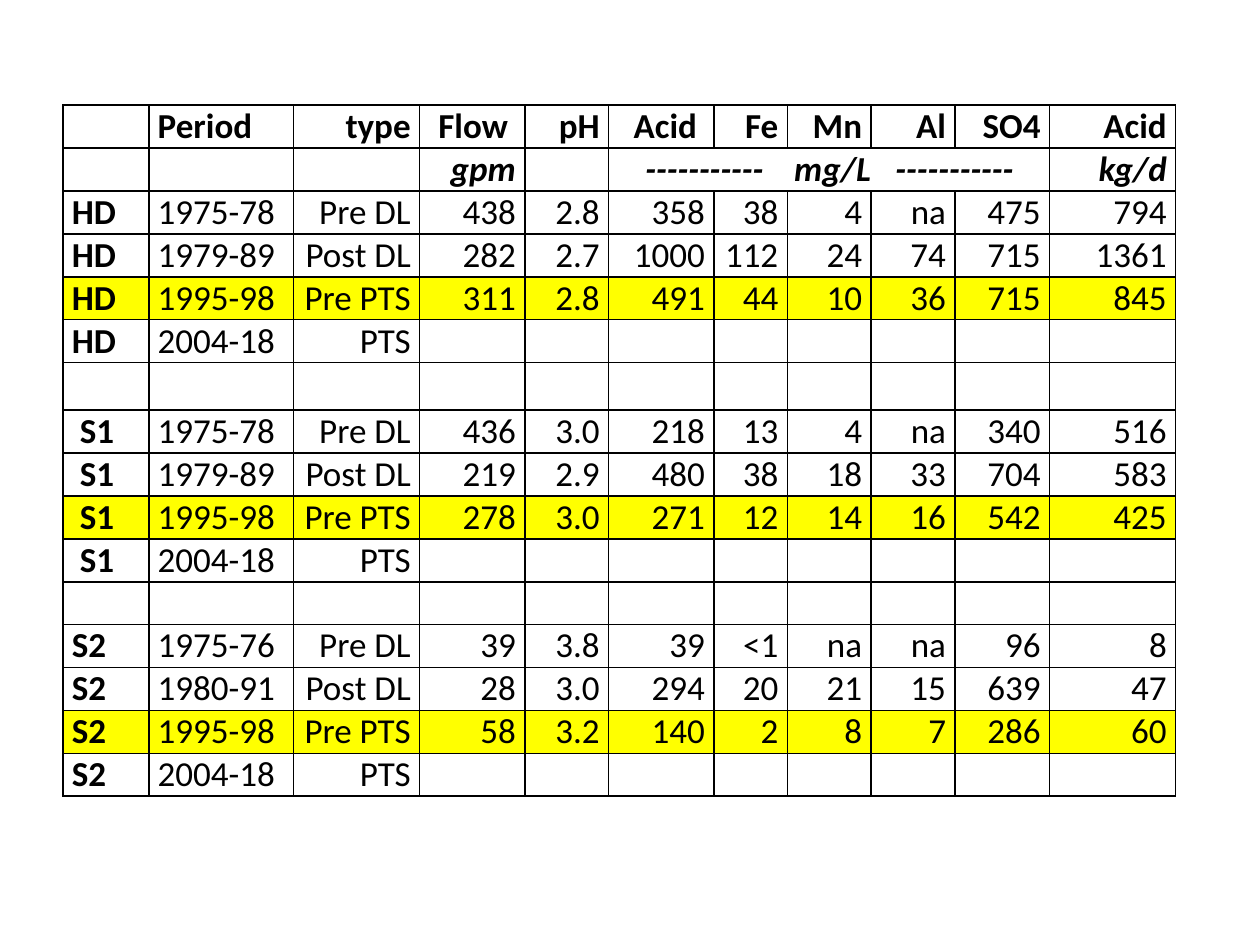
from dataclasses import dataclass

from lxml.etree import SubElement
from pptx import Presentation
from pptx.dml.color import RGBColor
from pptx.enum.text import PP_ALIGN as Align
from pptx.oxml.ns import qn
from pptx.table import Table, _Cell as Cell
from pptx.util import Cm, Pt

COLORS = {"ink": "000000", "highlight": "FFFF00"}
FONT_NAME = "Calibri"
COLUMN_WIDTHS = (1.73, 2.92, 2.54, 2.12, 1.69, 2.12, 1.48, 1.69, 1.69, 1.91, 2.54)
ROW_HEIGHT = 0.86
SIDE_MARGIN = 0.18
LEFT_ALIGNED_COLUMNS = 2
UNIT_ROW, UNIT_FIRST, UNIT_LAST = 1, 5, 9
UNIT_MARGIN = 0.74
UNIT_TABS = (3.0, 5.04)


@dataclass(frozen=True)
class Row:
    values: tuple[str, ...] = ()
    bold: bool = False
    italic: bool = False
    highlighted: bool = False
    height: float = ROW_HEIGHT


@dataclass(frozen=True)
class Site:
    """Measurements at one site, one line of text per period."""
    name: str
    periods: tuple[str, ...]


HEADER = Row(("", "Period", "type", "Flow ", "pH", "Acid ", "Fe", "Mn", "Al", "SO4", "Acid"),
             bold=True)
UNITS = Row(("", "", "", "gpm", "", "-----------\tmg/L\t-----------", "", "", "", "", "kg/d"),
            bold=True, italic=True)
SITES = (
    Site("HD", (
        "1975-78|Pre DL|438|2.8|358|38|4|na|475|794",
        "1979-89|Post DL|282|2.7|1000|112|24|74|715|1361",
        "1995-98|Pre PTS|311|2.8|491|44|10|36|715|845",
        "2004-18|PTS",
    )),
    Site(" S1", (
        "1975-78|Pre DL|436|3.0|218|13|4|na|340|516",
        "1979-89|Post DL|219|2.9|480|38|18|33|704|583",
        "1995-98|Pre PTS|278|3.0|271|12|14|16|542|425",
        "2004-18|PTS",
    )),
    Site("S2", (
        "1975-76|Pre DL|39|3.8|39|<1|na|na|96|8",
        "1980-91|Post DL|28|3.0|294|20|21|15|639|47",
        "1995-98|Pre PTS|58|3.2|140|2|8|7|286|60",
        "2004-18|PTS",
    )),
)
SPACERS = (Row(height=0.96), Row())


def table_rows() -> list[Row]:
    rows = [HEADER, UNITS]
    for index, site in enumerate(SITES):
        if index:
            rows.append(SPACERS[index - 1])
        for period in site.periods:
            values = (site.name, *period.split("|"))
            rows.append(Row(values, highlighted="Pre PTS" in values))
    return rows


def add_borders(cell: Cell) -> None:
    properties = cell._tc.get_or_add_tcPr()
    for side in ("lnL", "lnR", "lnT", "lnB"):
        line = SubElement(properties, qn(f"a:{side}"), w=str(Pt(1)))
        fill = SubElement(line, qn("a:solidFill"))
        SubElement(fill, qn("a:srgbClr"), val=COLORS["ink"])


def style_cell(cell: Cell, highlighted: bool) -> None:
    cell.margin_left = cell.margin_right = Cm(SIDE_MARGIN)
    cell.margin_top = cell.margin_bottom = 0
    add_borders(cell)
    if highlighted:
        cell.fill.solid()
        cell.fill.fore_color.rgb = RGBColor.from_string(COLORS["highlight"])
    else:
        cell.fill.background()


def write_cell(cell: Cell, text: str, align: Align, bold: bool, italic: bool) -> None:
    para = cell.text_frame.paragraphs[0]
    para.alignment = align
    span = para.add_run()
    span.text = text
    span.font.name = FONT_NAME
    span.font.size = Pt(20)
    span.font.bold = bold
    span.font.italic = italic
    span.font.color.rgb = RGBColor.from_string(COLORS["ink"])


def merge_concentration_units(table: Table) -> None:
    """Span the shared unit over its columns and set tab stops for its dashes."""
    cell = table.cell(UNIT_ROW, UNIT_FIRST)
    cell.merge(table.cell(UNIT_ROW, UNIT_LAST))
    cell.margin_left = Cm(UNIT_MARGIN)
    para = cell.text_frame.paragraphs[0]
    para.alignment = Align.LEFT
    tabs = SubElement(para._p.get_or_add_pPr(), qn("a:tabLst"))
    for position in UNIT_TABS:
        SubElement(tabs, qn("a:tab"), pos=str(Cm(position)), algn="l")


def fill_row(table: Table, row_index: int, row: Row) -> None:
    table.rows[row_index].height = Cm(row.height)
    for column, cell in enumerate(table.rows[row_index].cells):
        style_cell(cell, row.highlighted)
        text = row.values[column] if column < len(row.values) else ""
        if text:
            align = Align.LEFT if column < LEFT_ALIGNED_COLUMNS else Align.RIGHT
            write_cell(cell, text, align, row.bold or column == 0, row.italic)


def main() -> None:
    deck = Presentation()
    deck.slide_width, deck.slide_height = Cm(25.4), Cm(19.05)
    page = deck.slides.add_slide(deck.slide_layouts[6])
    rows = table_rows()
    frame = page.shapes.add_table(
        len(rows), len(COLUMN_WIDTHS), Cm(1.27), Cm(2.12),
        Cm(sum(COLUMN_WIDTHS)), Cm(sum(row.height for row in rows)))
    table = frame.table
    table.first_row = table.horz_banding = False
    for column, width in zip(table.columns, COLUMN_WIDTHS):
        column.width = Cm(width)
    for row_index, row in enumerate(rows):
        fill_row(table, row_index, row)
    merge_concentration_units(table)
    deck.save("out.pptx")


if __name__ == "__main__":
    main()
